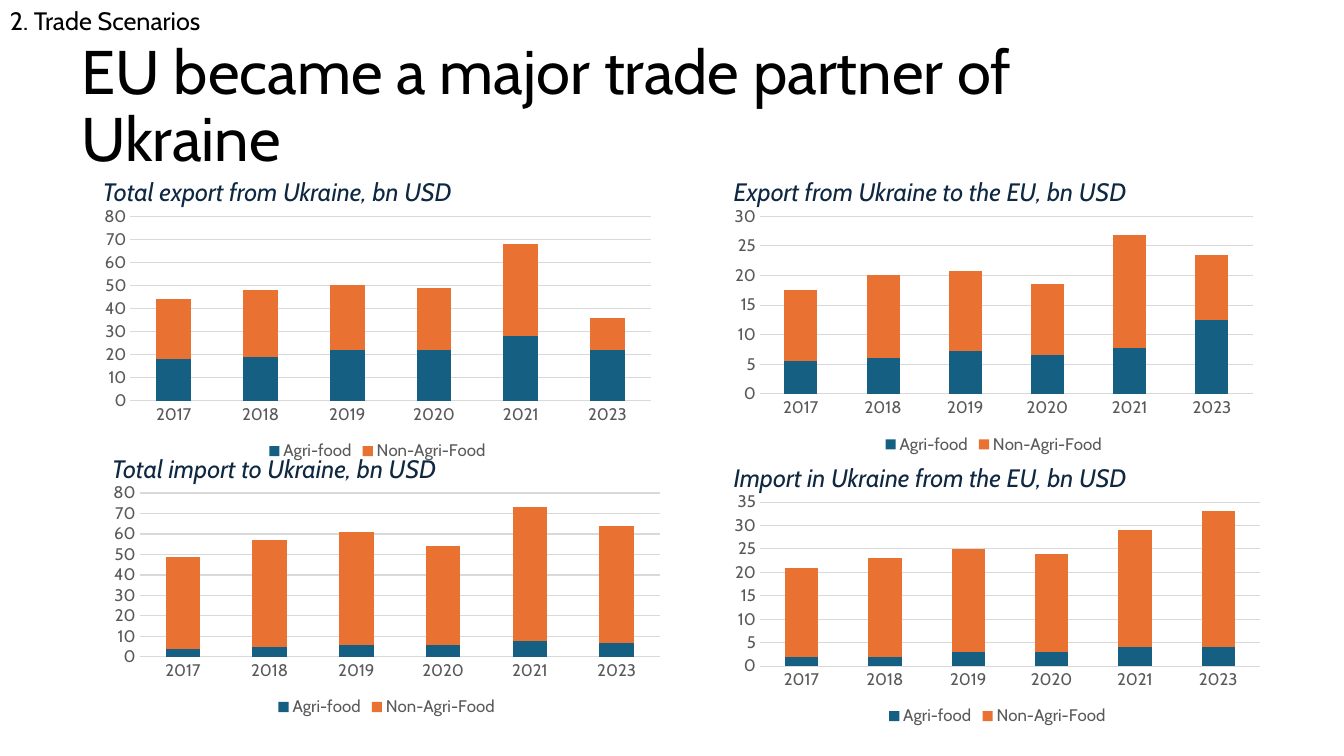
from pptx import Presentation
from pptx.chart.data import CategoryChartData
from pptx.dml.color import RGBColor
from pptx.enum.chart import XL_CHART_TYPE, XL_LEGEND_POSITION, XL_TICK_MARK
from pptx.enum.text import MSO_ANCHOR, PP_ALIGN
from pptx.util import Cm, Pt

BLACK = RGBColor(0x00, 0x00, 0x00)
NAVY = RGBColor(0x0E, 0x28, 0x41)
GREY = RGBColor(0x59, 0x59, 0x59)
LIGHT = RGBColor(0xD9, 0xD9, 0xD9)
TEAL = RGBColor(0x15, 0x60, 0x82)
ORANGE = RGBColor(0xE9, 0x71, 0x32)

FONT = "Cabin"
YEARS = ["2017", "2018", "2019", "2020", "2021", "2023"]
CAPTION_W, CAPTION_H = 16.94, 1.02
CHART_DROP = 0.75  # from the top of a caption to the top of its chart

# caption, (left, top, chart width, chart height) in cm, axis maximum and step,
# agri-food values, non-agri-food values
PANELS = [
    ("Total export from Ukraine, bn USD", (2.34, 4.32, 14.35, 6.65), 80, 10,
     [18, 19, 22, 22, 28, 22], [26, 29, 28, 27, 40, 14]),
    ("Export from Ukraine to the EU, bn USD", (18.24, 4.32, 13.61, 6.48), 30, 5,
     [5.6, 6.1, 7.3, 6.5, 7.7, 12.5], [11.9, 14, 13.4, 12.1, 19.1, 10.9]),
    ("Total import to Ukraine, bn USD", (2.57, 11.3, 14.35, 6.12), 80, 10,
     [4, 5, 6, 6, 8, 7], [45, 52, 55, 48, 65, 57]),
    ("Import in Ukraine from the EU, bn USD", (18.24, 11.53, 13.79, 6.12), 35, 5,
     [2, 2, 3, 3, 4, 4], [19, 21, 22, 21, 25, 29]),
]


def set_font(font, size, color):
    font.name = FONT
    font.size = Pt(size)
    font.color.rgb = color


def add_text(s, box, text, size, color):
    tf = s.shapes.add_textbox(*map(Cm, box)).text_frame
    tf.word_wrap = True
    p = tf.paragraphs[0]
    p.text = text
    set_font(p.font, size, color)
    return tf


def add_header(s, box):
    left, top, w, h = box
    # Section label
    add_text(s, (left, top, 24.89, 1.02), "2. Trade Scenarios", 18, BLACK)
    # Title
    tf = add_text(s, (left + 1.8, top + 1.17, w - 4.66, h - 1.17),
                  "EU became a major trade partner of Ukraine", 44, BLACK)
    tf.vertical_anchor = MSO_ANCHOR.MIDDLE
    tf.paragraphs[0].line_spacing = 0.9


def add_panel(s, box, caption, maximum, step, agri, non_agri):
    left, top, w, h = box
    # Stacked columns
    data = CategoryChartData()
    data.categories = YEARS
    data.add_series("Agri-food", agri)
    data.add_series("Non-Agri-Food", non_agri)
    chart = s.shapes.add_chart(
        XL_CHART_TYPE.COLUMN_STACKED,
        Cm(left), Cm(top + CHART_DROP), Cm(w), Cm(h), data).chart
    chart.has_title = False
    set_font(chart.font, 12, BLACK)
    plot = chart.plots[0]
    plot.vary_by_categories = False
    plot.gap_width, plot.overlap = 150, 100
    for series, color in zip(plot.series, (TEAL, ORANGE)):
        series.format.fill.solid()
        series.format.fill.fore_color.rgb = color

    # Axes and gridlines
    years, values = chart.category_axis, chart.value_axis
    for axis in (years, values):
        axis.major_tick_mark = axis.minor_tick_mark = XL_TICK_MARK.NONE
        set_font(axis.tick_labels.font, 12, GREY)
    values.minimum_scale, values.maximum_scale, values.major_unit = 0, maximum, step
    values.format.line.fill.background()
    for line in (years.format.line, values.major_gridlines.format.line):
        line.color.rgb = LIGHT
        line.width = Pt(0.75)

    # Legend
    chart.has_legend = True
    chart.legend.position = XL_LEGEND_POSITION.BOTTOM
    chart.legend.include_in_layout = False
    set_font(chart.legend.font, 12, GREY)

    # Caption
    p = add_text(s, (left, top, CAPTION_W, CAPTION_H), caption, 18, NAVY).paragraphs[0]
    p.font.italic = True
    p.alignment = PP_ALIGN.JUSTIFY
    p.space_after = Pt(10)


def main():
    prs = Presentation()
    prs.slide_width, prs.slide_height = Cm(33.87), Cm(19.05)
    s = prs.slides.add_slide(prs.slide_layouts[6])
    add_header(s, (0, 0, 33.87, 4.27))
    for caption, box, maximum, step, agri, non_agri in PANELS:
        add_panel(s, box, caption, maximum, step, agri, non_agri)
    prs.save("out.pptx")


if __name__ == "__main__":
    main()
